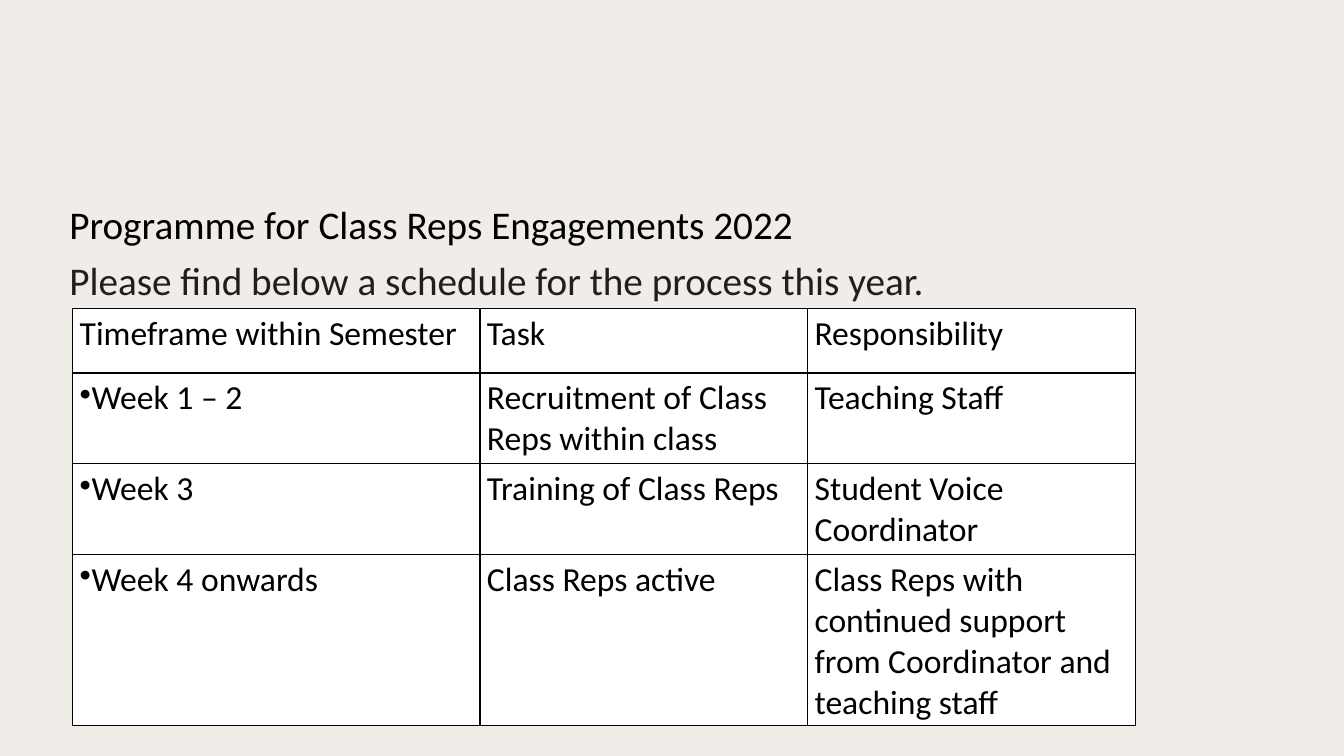
from pptx import Presentation
from pptx.dml.color import RGBColor
from pptx.enum.text import MSO_AUTO_SIZE as AutoSize
from pptx.oxml import parse_xml
from pptx.oxml.ns import nsdecls
from pptx.util import Inches, Pt

COLOURS = {"background": "F0EDE8", "ink": "000000", "intro": "201F1E", "cell": "FFFFFF"}

SCHEDULE = [
    ["Timeframe within Semester", "Task", "Responsibility"],
    ["Week 1 – 2", "Recruitment of Class Reps within class", "Teaching Staff"],
    ["Week 3", "Training of Class Reps", "Student Voice Coordinator"],
    ["Week 4 onwards", "Class Reps active",
     "Class Reps with continued support from Coordinator and teaching staff"],
]
COLUMN_WIDTHS = [4.04, 3.25, 3.25]
ROW_HEIGHTS = [0.64, 0.9, 0.9, 1.7]


class ScheduleSlide:
    font_name = "Calibri"

    def __init__(self, deck):
        self.slide = deck.slides.add_slide(deck.slide_layouts[6])
        background = self.slide.background.fill
        background.solid()
        background.fore_color.rgb = self.colour("background")

    def colour(self, key):
        return RGBColor.from_string(COLOURS[key])

    def add_text(self, paragraph, text, size, colour="ink"):
        run = paragraph.add_run()
        run.text = text
        run.font.name = self.font_name
        run.font.size = Pt(size)
        run.font.color.rgb = self.colour(colour)

    def line(self, text, top, width, colour="ink", wrap=True):
        """Add a one-line text box at the left margin."""
        box = self.slide.shapes.add_textbox(
            Inches(0.59), Inches(top), Inches(width), Inches(0.57))
        frame = box.text_frame
        frame.word_wrap = wrap
        frame.auto_size = AutoSize.SHAPE_TO_FIT_TEXT
        self.add_text(frame.paragraphs[0], text, 28, colour)

    def bullet(self, paragraph):
        properties = paragraph._p.get_or_add_pPr()
        properties.set("marL", "0")
        properties.set("indent", "0")
        properties.append(parse_xml(f'<a:buChar {nsdecls("a")} char="•"/>'))

    def borders(self, cell):
        properties = cell._tc.get_or_add_tcPr()
        for side in "LRTB":
            properties.append(parse_xml(
                f'<a:ln{side} {nsdecls("a")} w="{Pt(1)}"><a:solidFill>'
                f'<a:srgbClr val="{COLOURS["ink"]}"/></a:solidFill></a:ln{side}>'))

    def cell(self, cell, text, bulleted):
        self.borders(cell)
        cell.fill.solid()
        cell.fill.fore_color.rgb = self.colour("cell")
        cell.margin_left = cell.margin_right = Inches(0.07)
        cell.margin_top = cell.margin_bottom = Inches(0.05)
        paragraph = cell.text_frame.paragraphs[0]
        if bulleted:
            self.bullet(paragraph)
        self.add_text(paragraph, text, 24)

    def table(self, rows, left, top, widths, heights):
        grid = self.slide.shapes.add_table(
            len(rows), len(widths), Inches(left), Inches(top),
            Inches(sum(widths)), Inches(sum(heights))).table
        grid.first_row = grid.horz_banding = False
        for column, width in zip(grid.columns, widths):
            column.width = Inches(width)
        for row, height in zip(grid.rows, heights):
            row.height = Inches(height)
        for r, row in enumerate(rows):
            for c, text in enumerate(row):
                self.cell(grid.cell(r, c), text, bulleted=r > 0 and c == 0)


def main():
    deck = Presentation()
    deck.slide_width, deck.slide_height = Inches(13.33), Inches(7.5)
    page = ScheduleSlide(deck)
    page.line("Please find below a schedule for the process this year.",
              2.49, 8.77, "intro", wrap=False)
    page.line("Programme for Class Reps Engagements 2022", 1.94, 8.07)
    page.table(SCHEDULE, 0.72, 3.06, COLUMN_WIDTHS, ROW_HEIGHTS)
    deck.save("out.pptx")


if __name__ == "__main__":
    main()
